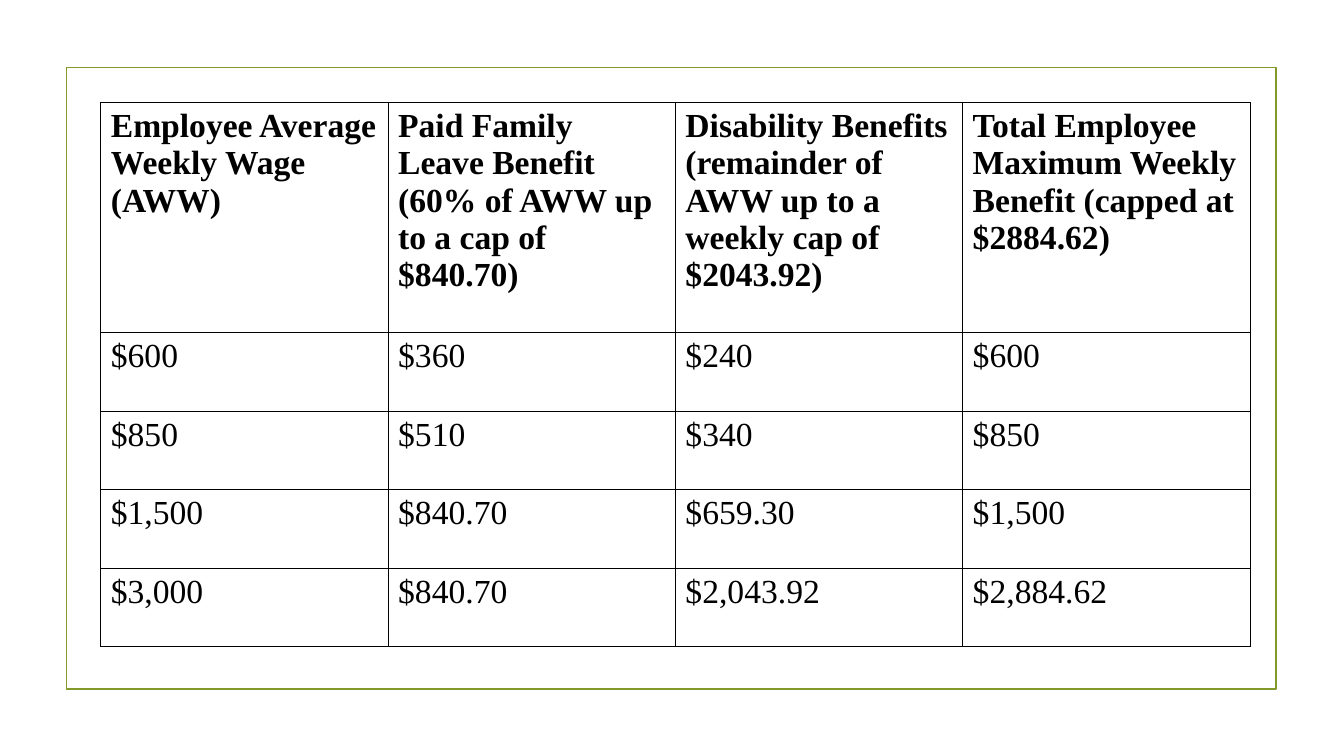
from dataclasses import dataclass

from lxml import etree
from pptx import Presentation
from pptx.dml.color import RGBColor
from pptx.enum.shapes import MSO_SHAPE
from pptx.oxml.ns import qn
from pptx.slide import Slide
from pptx.table import _Cell
from pptx.util import Cm, Pt

RECTANGLE = MSO_SHAPE.RECTANGLE


@dataclass(frozen=True)
class Theme:
    font: str = "Times New Roman"
    size: int = 24
    text: str = "000000"
    border: str = "000000"
    border_width: float = 0.75
    frame: str = "83992A"
    frame_width: float = 1.25


@dataclass(frozen=True)
class Box:
    left: float
    top: float
    width: float
    height: float

    def emu(self) -> tuple[Cm, Cm, Cm, Cm]:
        return Cm(self.left), Cm(self.top), Cm(self.width), Cm(self.height)


@dataclass(frozen=True)
class BenefitRow:
    height: float
    cells: tuple[str, str, str, str]
    bold: bool = False


THEME = Theme()
FRAME = Box(1.68, 1.7, 30.48, 17.37 - 1.7)
TABLE = Box(2.54, 2.59, 28.96, 13.71)
HEADER_HEIGHT = 5.79
BODY_HEIGHT = 1.98

ROWS = [
    BenefitRow(HEADER_HEIGHT, (
        "Employee Average Weekly Wage (AWW)",
        "Paid Family Leave Benefit\v(60% of AWW up to a cap of $840.70)",
        "Disability Benefits (remainder of AWW up to a weekly cap of $2043.92)",
        "Total Employee Maximum Weekly Benefit (capped at $2884.62)",
    ), bold=True),
    BenefitRow(BODY_HEIGHT, ("$600", "$360", "$240", "$600")),
    BenefitRow(BODY_HEIGHT, ("$850", "$510", "$340", "$850")),
    BenefitRow(BODY_HEIGHT, ("$1,500", "$840.70", "$659.30", "$1,500")),
    BenefitRow(BODY_HEIGHT, ("$3,000", "$840.70", "$2,043.92", "$2,884.62")),
]


def add_frame(s: Slide, box: Box) -> None:
    sp = s.shapes.add_shape(RECTANGLE, *box.emu())
    sp.shadow.inherit = False
    sp.fill.background()
    sp.line.color.rgb = RGBColor.from_string(THEME.frame)
    sp.line.width = Pt(THEME.frame_width)


def set_borders(cell: _Cell) -> None:
    tc_pr = cell._tc.get_or_add_tcPr()
    for i, side in enumerate(("lnL", "lnR", "lnT", "lnB")):
        ln = etree.Element(qn(f"a:{side}"), w=str(Pt(THEME.border_width)))
        fill = etree.SubElement(ln, qn("a:solidFill"))
        etree.SubElement(fill, qn("a:srgbClr"), val=THEME.border)
        tc_pr.insert(i, ln)


def fill_cell(cell: _Cell, text: str, bold: bool) -> None:
    cell.text = text
    cell.fill.background()
    set_borders(cell)
    for p in cell.text_frame.paragraphs:
        p.font.name = THEME.font
        p.font.size = Pt(THEME.size)
        p.font.bold = bold
        p.font.color.rgb = RGBColor.from_string(THEME.text)


def add_benefit_table(s: Slide, box: Box, rows: list[BenefitRow]) -> None:
    columns = len(rows[0].cells)
    table = s.shapes.add_table(len(rows), columns, *box.emu()).table
    table.first_row = False
    table.horz_banding = False
    for column in table.columns:
        column.width = Cm(box.width / columns)
    for i, row in enumerate(rows):
        table.rows[i].height = Cm(row.height)
        for j, text in enumerate(row.cells):
            fill_cell(table.cell(i, j), text, row.bold)


def main() -> None:
    prs = Presentation()
    prs.slide_width, prs.slide_height = Cm(33.87), Cm(19.05)
    s = prs.slides.add_slide(prs.slide_layouts[6])
    add_frame(s, FRAME)
    add_benefit_table(s, TABLE, ROWS)
    prs.save("out.pptx")


if __name__ == "__main__":
    main()
